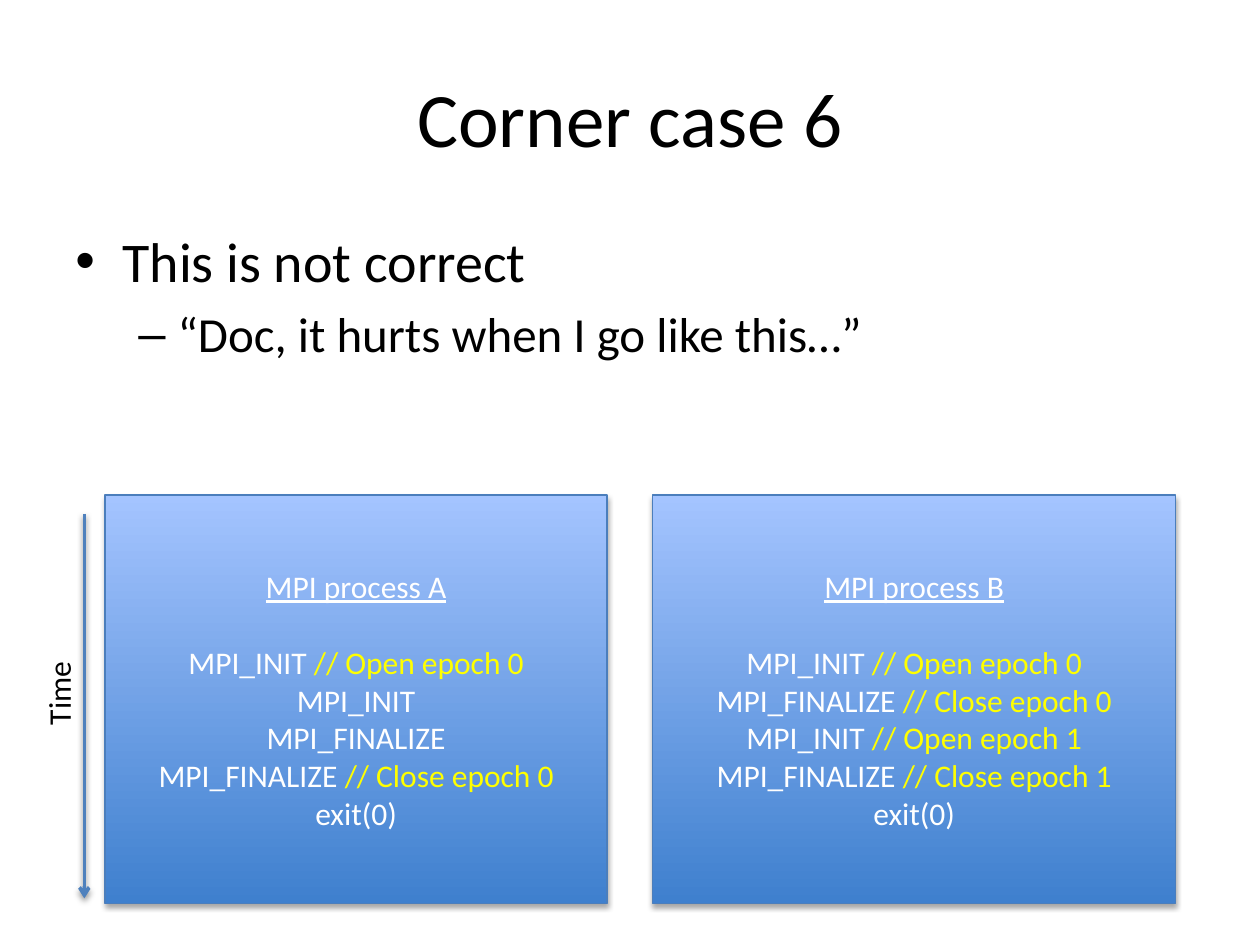
from dataclasses import dataclass

from lxml import etree
from pptx import Presentation
from pptx.dml.color import RGBColor
from pptx.enum.shapes import MSO_CONNECTOR, MSO_SHAPE
from pptx.enum.text import MSO_ANCHOR, PP_ALIGN
from pptx.oxml.ns import qn
from pptx.util import Cm, Pt

RECTANGLE = MSO_SHAPE.RECTANGLE
STRAIGHT = MSO_CONNECTOR.STRAIGHT
TOP, MIDDLE = MSO_ANCHOR.TOP, MSO_ANCHOR.MIDDLE
LEFT, CENTER = PP_ALIGN.LEFT, PP_ALIGN.CENTER


@dataclass(frozen=True)
class Theme:
    font: str = "Calibri"
    ink: str = "000000"
    light: str = "FFFFFF"
    comment: str = "FFFF00"
    panel_bottom: str = "3F80CE"
    panel_top: str = "A4C4FF"
    panel_edge: str = "4B7EBC"
    arrow: str = "4F81BD"
    title_size: int = 44
    point_size: int = 32
    subpoint_size: int = 28
    code_size: int = 18


THEME = Theme()

OPEN_0, CLOSE_0 = "// Open epoch 0", "// Close epoch 0"
OPEN_1, CLOSE_1 = "// Open epoch 1", "// Close epoch 1"
PROCESS_A = [
    ("MPI_INIT ", OPEN_0),
    ("MPI_INIT", ""),
    ("MPI_FINALIZE", ""),
    ("MPI_FINALIZE ", CLOSE_0),
    ("exit(0)", ""),
]
PROCESS_B = [
    ("MPI_INIT ", OPEN_0),
    ("MPI_FINALIZE ", CLOSE_0),
    ("MPI_INIT ", OPEN_1),
    ("MPI_FINALIZE ", CLOSE_1),
    ("exit(0)", ""),
]


def rgb(value):
    return RGBColor.from_string(value)


def write(paragraph, text, size=THEME.code_size, color=THEME.ink,
          underline=False, align=LEFT, before=0, after=0):
    paragraph.alignment = align
    paragraph.space_before, paragraph.space_after = Pt(before), Pt(after)
    run = paragraph.add_run()
    run.text = text
    run.font.name = THEME.font
    run.font.size = Pt(size)
    run.font.color.rgb = rgb(color)
    run.font.underline = underline


def add_bullet(paragraph, mark, margin, hanging):
    properties = paragraph._p.get_or_add_pPr()
    properties.set("marL", str(Cm(margin)))
    properties.set("indent", str(-Cm(hanging)))
    etree.SubElement(properties, qn("a:buFont"), typeface="Arial")
    etree.SubElement(properties, qn("a:buChar"), char=mark)


def add_shadow(item, opacity, distance):
    effects = etree.SubElement(item._element.spPr, qn("a:effectLst"))
    shadow = etree.SubElement(
        effects, qn("a:outerShdw"), blurRad=str(Pt(3.1)),
        dist=str(Pt(distance)), dir="5400000", rotWithShape="0")
    color = etree.SubElement(shadow, qn("a:srgbClr"), val=THEME.ink)
    etree.SubElement(color, qn("a:alpha"), val=str(opacity * 1000))


def add_text_area(slide, box, anchor=TOP, wrap=True):
    area = slide.shapes.add_textbox(*map(Cm, box))
    area.text_frame.word_wrap = wrap
    area.text_frame.vertical_anchor = anchor
    return area


def add_title(slide, box, text):
    title = add_text_area(slide, box, MIDDLE)
    write(title.text_frame.paragraphs[0], text,
          size=THEME.title_size, align=CENTER)


def add_points(slide, box, point, subpoint):
    frame = add_text_area(slide, box).text_frame
    levels = [
        (frame.paragraphs[0], point, THEME.point_size, "•", 0.95, 0.95),
        (frame.add_paragraph(), subpoint, THEME.subpoint_size, "–", 2.06, 0.79),
    ]
    for paragraph, text, size, mark, margin, hanging in levels:
        write(paragraph, text, size=size, before=size * 0.2)
        add_bullet(paragraph, mark, margin, hanging)
    frame.paragraphs[1].level = 1


def add_process(slide, box, heading, calls):
    panel = slide.shapes.add_shape(RECTANGLE, *map(Cm, box))
    panel.fill.gradient()
    panel.fill.gradient_angle = 90
    for stop, color in zip(panel.fill.gradient_stops,
                           (THEME.panel_bottom, THEME.panel_top)):
        stop.color.rgb = rgb(color)
    panel.line.color.rgb = rgb(THEME.panel_edge)
    panel.line.width = Pt(0.75)
    add_shadow(panel, opacity=35, distance=1.8)

    frame = panel.text_frame
    frame.word_wrap = True
    frame.vertical_anchor = MIDDLE
    write(frame.paragraphs[0], heading, color=THEME.light, underline=True,
          align=CENTER, after=THEME.code_size * 1.22)
    for call, comment in calls:
        line = frame.add_paragraph()
        write(line, call, color=THEME.light, align=CENTER)
        if comment:
            write(line, comment, color=THEME.comment, align=CENTER)


def add_time_axis(slide, box):
    left, top, width, height = box
    axis_x = Cm(left + width)
    axis = slide.shapes.add_connector(
        STRAIGHT, axis_x, Cm(top), axis_x, Cm(top + height))
    axis.line.color.rgb = rgb(THEME.arrow)
    axis.line.width = Pt(2)
    etree.SubElement(axis.line._get_or_add_ln(), qn("a:tailEnd"), type="arrow")
    add_shadow(axis, opacity=38, distance=1.6)

    label_width, label_height = 1.8, 1.02
    label_box = (left + (label_height - label_width) / 2,
                 top + (height - label_width) / 2 + 0.12,
                 label_width, label_height)
    label = add_text_area(slide, label_box, wrap=False)
    label.rotation = 270
    write(label.text_frame.paragraphs[0], "Time")


def main():
    deck = Presentation()
    deck.slide_width, deck.slide_height = Cm(25.4), Cm(19.05)
    slide = deck.slides.add_slide(deck.slide_layouts[6])

    add_title(slide, (1.27, 0.76, 22.86, 3.18), "Corner case 6")
    add_points(slide, (1.27, 4.45, 24.13, 12.57), "This is not correct",
               "“Doc, it hurts when I go like this…”")
    panel_top, panel_height = 9.98, 8.23
    add_process(slide, (2.12, panel_top, 10.12, panel_height),
                "MPI process A", PROCESS_A)
    add_process(slide, (13.16, panel_top, 10.54, panel_height),
                "MPI process B", PROCESS_B)
    add_time_axis(slide, (0.67, 10.36, 1.03, 7.75))
    deck.save("out.pptx")


if __name__ == "__main__":
    main()
